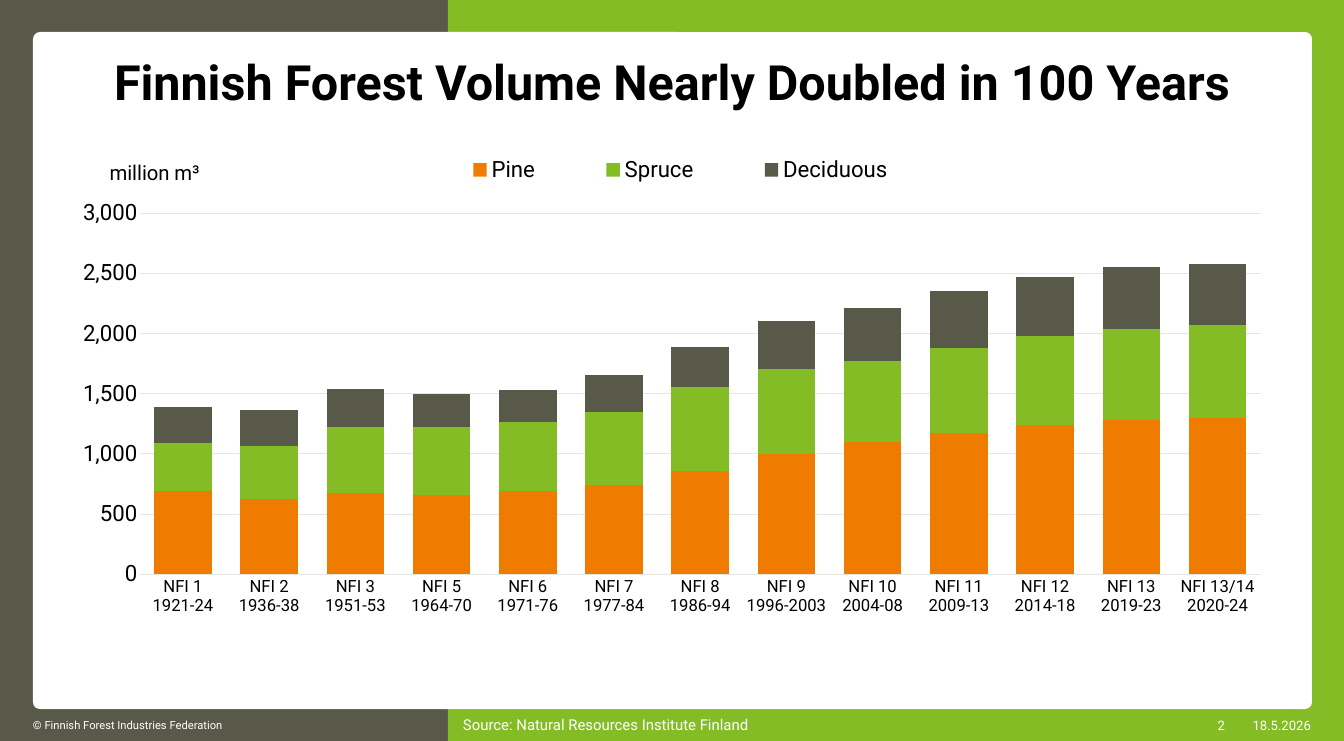
from dataclasses import dataclass
from lxml.etree import SubElement
from pptx import Presentation
from pptx.chart.data import CategoryChartData
from pptx.dml.color import RGBColor
from pptx.enum.chart import XL_CHART_TYPE, XL_LEGEND_POSITION, XL_TICK_MARK
from pptx.enum.shapes import MSO_SHAPE
from pptx.enum.text import MSO_ANCHOR, MSO_AUTO_SIZE, PP_ALIGN
from pptx.oxml.ns import qn
from pptx.util import Pt


@dataclass(frozen=True)
class Theme:
    font: str = "Roboto"
    dark: str = "595949"
    green: str = "84BC26"
    pine: str = "EF7C00"
    white: str = "FFFFFF"
    black: str = "000000"
    grid: str = "E7E7E2"
    title: int = 52
    axis: int = 24
    unit: int = 22
    label: int = 18
    source: int = 16
    foot: int = 14
    small: int = 12


THEME = Theme()
PX = 914400 / 67.2
WIDE, HIGH, SPLIT = 1344, 741, 448
TITLE = "Finnish Forest Volume Nearly Doubled in 100 Years"
UNIT = "million m³"
PANELS = [
    (MSO_SHAPE.RECTANGLE, (0, 0, SPLIT, HIGH), THEME.dark),
    (MSO_SHAPE.RECTANGLE, (SPLIT, 0, WIDE - SPLIT, HIGH), THEME.green),
    (MSO_SHAPE.ROUNDED_RECTANGLE, (33, 32, 1279, 677), THEME.white),
]
FOOTER = [
    ("© Finnish Forest Industries Federation", (33, 714, 415, 23), THEME.small, PP_ALIGN.LEFT),
    ("2", (1189, 709, 36, 32), THEME.foot, PP_ALIGN.RIGHT),
    ("Source: Natural Resources Institute Finland", (463, 709, 418, 32), THEME.source, PP_ALIGN.LEFT),
    ("18.5.2026", (1238, 709, 73, 32), THEME.foot, PP_ALIGN.RIGHT),
]
ROUNDS = [
    ("NFI 1", "1921-24", 690, 400, 300),
    ("NFI 2", "1936-38", 620, 440, 300),
    ("NFI 3", "1951-53", 670, 550, 320),
    ("NFI 5", "1964-70", 660, 560, 280),
    ("NFI 6", "1971-76", 690, 570, 270),
    ("NFI 7", "1977-84", 740, 610, 300),
    ("NFI 8", "1986-94", 860, 690, 340),
    ("NFI 9", "1996-2003", 1000, 700, 400),
    ("NFI 10", "2004-08", 1100, 670, 440),
    ("NFI 11", "2009-13", 1170, 710, 470),
    ("NFI 12", "2014-18", 1240, 740, 490),
    ("NFI 13", "2019-23", 1280, 760, 510),
    ("NFI 13/14", "2020-24", 1300, 770, 510),
]
TREES = [("Pine", THEME.pine), ("Spruce", THEME.green), ("Deciduous", THEME.dark)]
CHART = (83, 152, 1178, 496)
PLOT = (129 - 83, 213 - 152, 1132, 361)
LEGEND = (318, 4, 548, 28)
CORNER = (12, 3)


def emu(box):
    return [round(n * PX) for n in box]


def style(font, size, color=THEME.black, bold=False):
    font.name, font.size, font.bold = THEME.font, Pt(size), bold
    font.color.rgb = RGBColor.from_string(color)


def rule(line):
    line.color.rgb = RGBColor.from_string(THEME.grid)
    line.width = Pt(0.75)


def place(parent, before, box, inner=False):
    for old in parent.findall(qn("c:layout")):
        parent.remove(old)
    layout = SubElement(parent, qn("c:layout"))
    mark = next((e for e in parent if e.tag in [qn(t) for t in before]), None)
    if mark is not None:
        mark.addprevious(layout)
    manual = SubElement(layout, qn("c:manualLayout"))
    parts = [("layoutTarget", "inner")] if inner else []
    parts += [("xMode", "edge"), ("yMode", "edge")]
    sizes = CHART[2:] * 2
    parts += [(key, f"{n / size:.3f}") for key, n, size in zip("xywh", box, sizes)]
    for key, val in parts:
        SubElement(manual, qn(f"c:{key}")).set("val", val)


def panel(slide, kind, box, color):
    shape = slide.shapes.add_shape(kind, *emu(box))
    shape.shadow.inherit = False
    shape.fill.solid()
    shape.fill.fore_color.rgb = RGBColor.from_string(color)
    shape.line.fill.background()
    if kind == MSO_SHAPE.ROUNDED_RECTANGLE:
        shape.adjustments[0] = 0.01


def note(slide, text, box, size, align):
    frame = slide.shapes.add_textbox(*emu(box)).text_frame
    frame.margin_left = frame.margin_right = frame.margin_top = frame.margin_bottom = 0
    frame.word_wrap = True
    frame.vertical_anchor = MSO_ANCHOR.MIDDLE
    frame.text = text
    line = frame.paragraphs[0]
    line.alignment = align
    style(line.runs[0].font, size, THEME.white)


def head(slide):
    title = slide.shapes.title
    title.left, title.top, title.width, title.height = emu((83, 55, 1178, 97))
    slide.shapes._spTree.append(title._element)
    frame = title.text_frame
    frame.text = TITLE
    frame.auto_size = MSO_AUTO_SIZE.NONE
    frame.vertical_anchor = MSO_ANCHOR.TOP
    line = frame.paragraphs[0]
    line.alignment, line.line_spacing = PP_ALIGN.CENTER, 0.9
    style(line.runs[0].font, THEME.title, bold=True)


def graph(slide):
    data = CategoryChartData(number_format="#,##0")
    data.categories = [f"{name}\n{years}" for name, years, *_ in ROUNDS]
    for i, (tree, _) in enumerate(TREES):
        data.add_series(tree, [row[2 + i] for row in ROUNDS])
    chart = slide.shapes.add_chart(XL_CHART_TYPE.COLUMN_STACKED, *emu(CHART), data).chart
    style(chart.font, 10, THEME.dark)
    chart.has_title = False

    plot = chart.plots[0]
    plot.gap_width, plot.overlap, plot.vary_by_categories = 50, 100, False
    for series, (_, color) in zip(plot.series, TREES):
        series.format.fill.solid()
        series.format.fill.fore_color.rgb = RGBColor.from_string(color)
    area = chart._chartSpace.chart.plotArea
    place(area, ["c:barChart"], PLOT, inner=True)

    cats, vals = chart.category_axis, chart.value_axis
    for axis, size in [(cats, THEME.label), (vals, THEME.axis)]:
        axis.major_tick_mark = axis.minor_tick_mark = XL_TICK_MARK.NONE
        style(axis.tick_labels.font, size)
    rule(cats.format.line)
    vals.format.line.fill.background()
    rule(vals.major_gridlines.format.line)
    vals.minimum_scale, vals.maximum_scale, vals.major_unit = 0, 3000, 500
    vals.tick_labels.number_format = "#,##0"
    vals.tick_labels.number_format_is_linked = False

    unit = vals.axis_title
    unit.text_frame.text = UNIT
    style(unit.text_frame.paragraphs[0].runs[0].font, THEME.unit)
    body = unit.text_frame._txBody.bodyPr
    body.set("rot", "0")
    body.set("vert", "horz")
    place(unit._element, ["c:overlay", "c:spPr", "c:txPr"], CORNER)

    chart.has_legend = True
    legend = chart.legend
    legend.position = XL_LEGEND_POSITION.TOP
    legend.include_in_layout = True
    style(legend.font, THEME.axis)
    place(legend._element, ["c:overlay", "c:spPr", "c:txPr"], LEGEND)


def main():
    deck = Presentation()
    deck.slide_width, deck.slide_height = emu((WIDE, HIGH))
    slide = deck.slides.add_slide(deck.slide_layouts[5])
    for item in PANELS:
        panel(slide, *item)
    for item in FOOTER:
        note(slide, *item)
    head(slide)
    graph(slide)
    deck.save("out.pptx")


if __name__ == "__main__":
    main()
